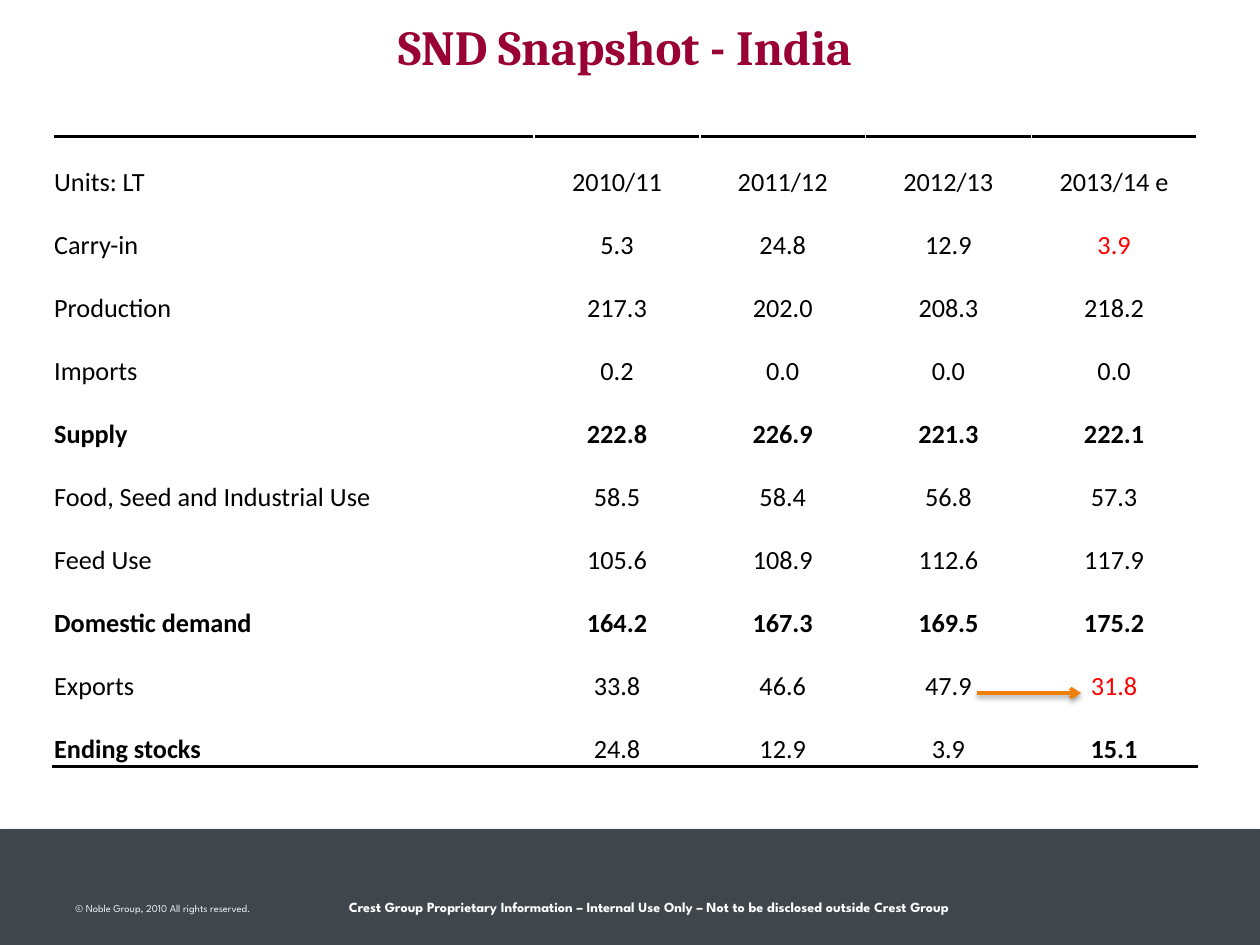
from dataclasses import dataclass

from lxml.etree import SubElement
from pptx import Presentation
from pptx.dml.color import RGBColor
from pptx.enum.shapes import MSO_CONNECTOR, MSO_SHAPE
from pptx.enum.text import MSO_ANCHOR, MSO_AUTO_SIZE, PP_ALIGN
from pptx.oxml.ns import qn
from pptx.util import Inches, Pt


@dataclass(frozen=True)
class Theme:
    heading: str = "990033"
    text: str = "000000"
    alert: str = "FF0000"
    paper: str = "FFFFFF"
    band: str = "3F474D"
    copyright: str = "F2F2F2"
    arrow: str = "F07F09"
    heading_font: str = "Cambria"
    table_font: str = "Calibri"
    footer_font: str = "League Spartan"
    heading_size: int = 28
    table_size: int = 15
    notice_size: int = 8
    copyright_size: int = 6
    line_width: int = 2


THEME = Theme()

BALANCE = [
    ("Units: LT", "2010/11", "2011/12", "2012/13", "2013/14 e"),
    ("Carry-in", "5.3", "24.8", "12.9", "3.9"),
    ("Production", "217.3", "202.0", "208.3", "218.2"),
    ("Imports", "0.2", "0.0", "0.0", "0.0"),
    ("Supply", "222.8", "226.9", "221.3", "222.1"),
    ("Food, Seed and Industrial Use", "58.5", "58.4", "56.8", "57.3"),
    ("Feed Use", "105.6", "108.9", "112.6", "117.9"),
    ("Domestic demand", "164.2", "167.3", "169.5", "175.2"),
    ("Exports", "33.8", "46.6", "47.9", "31.8"),
    ("Ending stocks", "24.8", "12.9", "3.9", "15.1"),
]
LAST_COLUMN = len(BALANCE[0]) - 1
BOLD_ROWS = {"Supply", "Domestic demand"}
BOLD_CELLS = {("Ending stocks", 0), ("Ending stocks", LAST_COLUMN)}
ALERT_CELLS = {("Carry-in", LAST_COLUMN), ("Exports", LAST_COLUMN)}


def add_span(para, text, font, size, color, bold=False):
    span = para.add_run()
    span.text = text
    span.font.name = font
    span.font.size = Pt(size)
    span.font.bold = bold
    span.font.color.rgb = RGBColor.from_string(color)


def add_shadow(properties, opacity, blur, distance):
    """Downward black shadow; opacity in percent, lengths in points."""
    effects = SubElement(properties, qn("a:effectLst"))
    shadow = SubElement(effects, qn("a:outerShdw"), blurRad=str(Pt(blur)),
                        dist=str(Pt(distance)), dir="5400000", rotWithShape="0")
    color = SubElement(shadow, qn("a:srgbClr"), val="000000")
    SubElement(color, qn("a:alpha"), val=str(opacity * 1000))


def add_cell_border(cell, side):
    properties = cell._tc.get_or_add_tcPr()
    border = SubElement(properties, qn(f"a:{side}"), w=str(Pt(THEME.line_width)))
    fill = SubElement(border, qn("a:solidFill"))
    SubElement(fill, qn("a:srgbClr"), val=THEME.text)
    properties.insert(0, border)  # borders come before the fill


def add_title(page, left, top, width, height):
    title = page.shapes.title
    title.left, title.top, title.width, title.height = left, top, width, height
    frame = title.text_frame
    frame.auto_size = MSO_AUTO_SIZE.NONE
    frame.vertical_anchor = MSO_ANCHOR.MIDDLE
    para = frame.paragraphs[0]
    para.alignment = PP_ALIGN.CENTER
    add_span(para, "SND Snapshot - India", THEME.heading_font,
             THEME.heading_size, THEME.heading, bold=True)


def add_footer_text(page, left, top, width, height, text, size, color, anchor, bold):
    box = page.shapes.add_textbox(left, top, width, height)
    frame = box.text_frame
    frame.word_wrap = True
    frame.vertical_anchor = anchor
    add_span(frame.paragraphs[0], text, THEME.footer_font, size, color, bold)


def add_footer(page, left, top, width, height):
    band = page.shapes.add_shape(MSO_SHAPE.RECTANGLE, left, top, width, height)
    band.fill.solid()
    band.fill.fore_color.rgb = RGBColor.from_string(THEME.band)
    band.line.fill.background()
    add_shadow(band._element.spPr, 35, 3.1, 1.8)
    add_footer_text(page, left + Inches(0.5), top + Inches(0.53), Inches(4), Inches(0.2),
                    "© Noble Group, 2010 All rights reserved.",
                    THEME.copyright_size, THEME.copyright, MSO_ANCHOR.BOTTOM, False)
    add_footer_text(page, left + Inches(2.67), top + Inches(0.5), Inches(5), Inches(0.37),
                    "Crest Group Proprietary Information – Internal Use Only – "
                    "Not to be disclosed outside Crest Group",
                    THEME.notice_size, THEME.paper, MSO_ANCHOR.TOP, True)


def fill_cell(cell, text, label, column):
    cell.fill.solid()
    cell.fill.fore_color.rgb = RGBColor.from_string(THEME.paper)
    cell.vertical_anchor = MSO_ANCHOR.BOTTOM
    cell.margin_left = cell.margin_right = cell.margin_top = Inches(0.01)
    cell.margin_bottom = 0
    para = cell.text_frame.paragraphs[0]
    para.alignment = PP_ALIGN.CENTER if column else PP_ALIGN.LEFT
    color = THEME.alert if (label, column) in ALERT_CELLS else THEME.text
    bold = label in BOLD_ROWS or (label, column) in BOLD_CELLS
    add_span(para, text, THEME.table_font, THEME.table_size, color, bold)


def add_balance_table(page, left, top, width, height):
    frame = page.shapes.add_table(len(BALANCE), len(BALANCE[0]), left, top, width, height)
    table = frame.table
    table.first_row = table.horz_banding = False

    # Wide label column; the years share the rest
    label_width = Inches(3.82)
    for index, column in enumerate(table.columns):
        column.width = (width - label_width) // LAST_COLUMN if index else label_width

    for row, values in enumerate(BALANCE):
        for column, text in enumerate(values):
            fill_cell(table.cell(row, column), text, values[0], column)

    # Rules above and below the table
    for column in range(len(BALANCE[0])):
        add_cell_border(table.cell(0, column), "lnT")
        add_cell_border(table.cell(len(BALANCE) - 1, column), "lnB")


def add_export_arrow(page, left, top, width):
    arrow = page.shapes.add_connector(MSO_CONNECTOR.STRAIGHT, left, top, left + width, top)
    arrow.line.width = Pt(THEME.line_width)
    arrow.line.color.rgb = RGBColor.from_string(THEME.arrow)
    SubElement(arrow.line._get_or_add_ln(), qn("a:tailEnd"), type="arrow")
    add_shadow(arrow._element.spPr, 38, 3.1, 1.6)


def main():
    deck = Presentation()
    deck.slide_width, deck.slide_height = Inches(10), Inches(7.5)
    page = deck.slides.add_slide(deck.slide_layouts[5])
    add_footer(page, 0, Inches(6.58), deck.slide_width, Inches(0.92))
    add_title(page, Inches(0.25), Inches(0.08), Inches(9.42), Inches(0.57))
    add_balance_table(page, Inches(0.42), Inches(1.08), Inches(9.08), Inches(5))
    add_export_arrow(page, Inches(7.75), Inches(5.5), Inches(0.83))
    deck.save("out.pptx")


if __name__ == "__main__":
    main()
